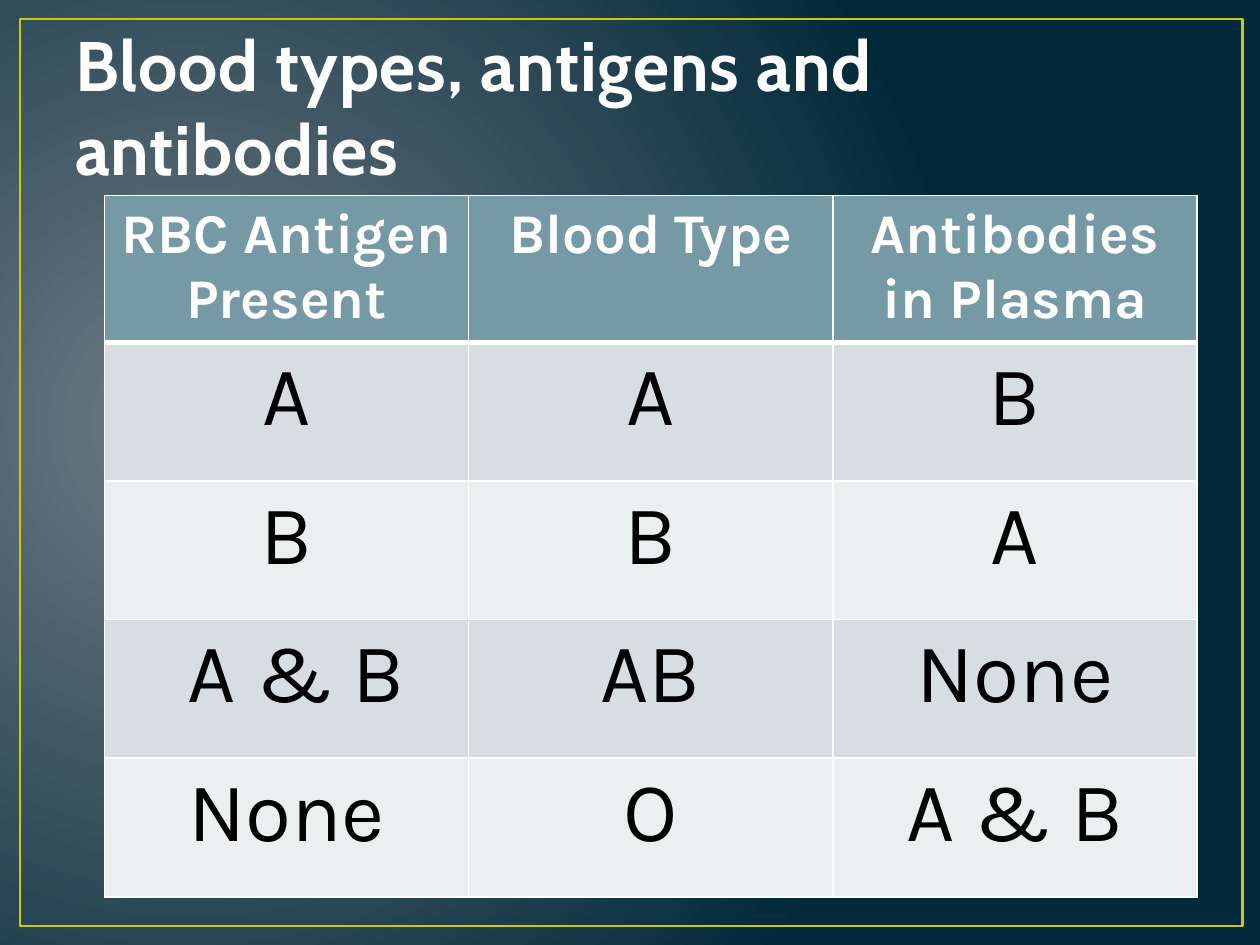
"""Build a slide with a table of blood types, antigens and antibodies."""
from dataclasses import dataclass

from lxml import etree
from pptx import Presentation
from pptx.dml.color import RGBColor
from pptx.enum.shapes import MSO_SHAPE
from pptx.enum.text import MSO_ANCHOR, PP_ALIGN
from pptx.oxml.ns import qn
from pptx.util import Inches, Pt

RECTANGLE = MSO_SHAPE.RECTANGLE
BOTTOM = MSO_ANCHOR.BOTTOM
CENTER = PP_ALIGN.CENTER
BLANK_LAYOUT = 6


@dataclass(frozen=True)
class Theme:
    glow: str = "717C84"
    backdrop: str = "01293A"
    frame: str = "CFC60D"
    title: str = "FEFEFE"
    header_fill: str = "759AA5"
    header_text: str = "FFFFFF"
    row_fills: tuple = ("D6DEE1", "ECEFF0")
    body_text: str = "000000"
    border: str = "FFFFFF"
    title_font: str = "Cabin"
    table_font: str = "Karla"
    title_size: int = 40
    header_size: int = 32
    body_size: int = 48


THEME = Theme()
TITLE = "Blood types, antigens and antibodies"
BLOOD_TYPES = [
    ("RBC Antigen Present", "Blood Type", "Antibodies in Plasma"),
    ("A", "A", "B"),
    ("B", "B", "A"),
    (" A & B", "AB", "None"),
    ("None", "O", "A & B"),
]


def rgb(value):
    return RGBColor.from_string(value)


def set_font(paragraph, name, size, color, bold):
    font = paragraph.font
    font.name, font.size, font.bold = name, Pt(size), bold
    font.color.rgb = rgb(color)


def paint_background(slide):
    fill = slide.background.fill
    fill.gradient()
    for stop, color in zip(fill.gradient_stops, (THEME.glow, THEME.backdrop)):
        stop.color.rgb = rgb(color)
    gradient = slide.element.find(".//" + qn("a:gradFill"))
    gradient.remove(gradient.find(qn("a:lin")))
    circle = etree.SubElement(gradient, qn("a:path"), path="circle")
    etree.SubElement(circle, qn("a:fillToRect"),
                     l="15000", t="50000", r="85000", b="60000")


def add_frame(slide):
    shape = slide.shapes.add_shape(
        RECTANGLE, Inches(0.16), Inches(0.15), Inches(9.7), Inches(7.2))
    shape.shadow.inherit = False
    shape.fill.background()
    shape.line.color.rgb = rgb(THEME.frame)
    shape.line.width = Pt(1.5)


def add_title(slide):
    shape = slide.shapes.add_textbox(
        Inches(0.5), Inches(0.3), Inches(9), Inches(1.25))
    frame = shape.text_frame
    frame.word_wrap = True
    frame.vertical_anchor = BOTTOM
    paragraph = frame.paragraphs[0]
    run = paragraph.add_run()
    run.text = TITLE
    set_font(paragraph, THEME.title_font, THEME.title_size, THEME.title, True)
    run.font.bold = True
    run.font._element.set("spc", "50")


def set_borders(cell, bottom_width):
    properties = cell._tc.get_or_add_tcPr()
    for side, width in zip("LRTB", (1, 1, 1, bottom_width)):
        line = etree.SubElement(properties, qn(f"a:ln{side}"), w=str(Pt(width)))
        solid = etree.SubElement(line, qn("a:solidFill"))
        etree.SubElement(solid, qn("a:srgbClr"), val=THEME.border)


def fill_cell(cell, text, row):
    header = row == 0
    set_borders(cell, 3 if header else 1)
    cell.fill.solid()
    cell.fill.fore_color.rgb = rgb(
        THEME.header_fill if header else THEME.row_fills[(row - 1) % 2])
    cell.text = text
    paragraph = cell.text_frame.paragraphs[0]
    paragraph.alignment = CENTER
    set_font(paragraph, THEME.table_font,
             THEME.header_size if header else THEME.body_size,
             THEME.header_text if header else THEME.body_text, header)


def add_blood_table(slide):
    table = slide.shapes.add_table(
        len(BLOOD_TYPES), len(BLOOD_TYPES[0]),
        Inches(0.83), Inches(1.55), Inches(8.67), Inches(5.53)).table
    for column in table.columns:
        column.width = Inches(2.89)
    for row, texts in enumerate(BLOOD_TYPES):
        table.rows[row].height = Inches(1.1 if row else 1.13)
        for column, text in enumerate(texts):
            fill_cell(table.cell(row, column), text, row)


def main():
    presentation = Presentation()
    presentation.slide_width = Inches(10)
    presentation.slide_height = Inches(7.5)
    slide = presentation.slides.add_slide(
        presentation.slide_layouts[BLANK_LAYOUT])
    paint_background(slide)
    add_frame(slide)
    add_title(slide)
    add_blood_table(slide)
    presentation.save("out.pptx")


if __name__ == "__main__":
    main()
